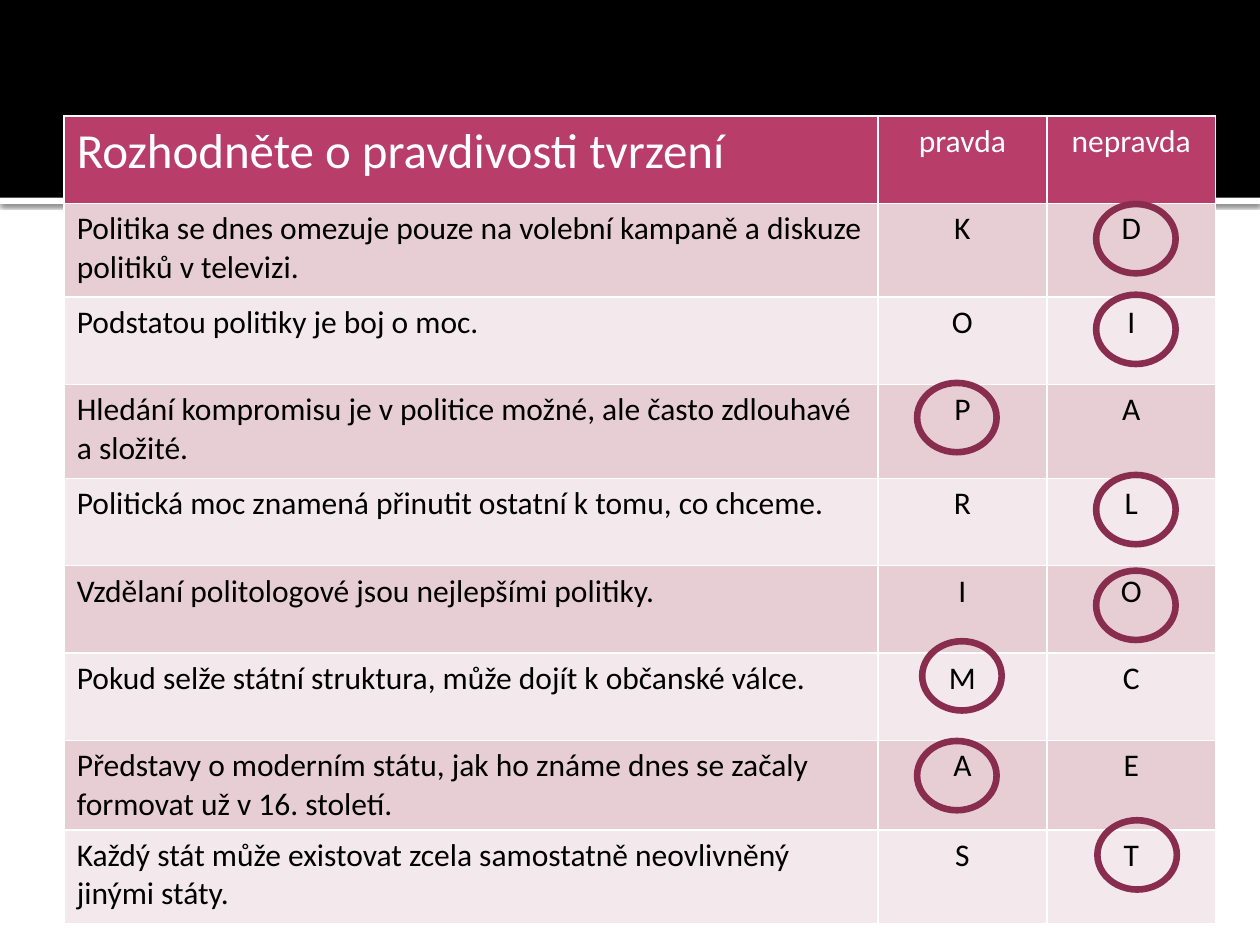
from dataclasses import dataclass
from itertools import accumulate

from lxml import etree
from pptx import Presentation
from pptx.dml.color import RGBColor
from pptx.enum import shapes, text
from pptx.oxml import ns
from pptx.util import Pt


@dataclass(frozen=True)
class Theme:
    font: str = "Calibri"
    title_size: float = 28
    body_size: float = 18
    ring_width: float = 3.78
    black: str = "000000"
    white: str = "FFFFFF"
    header: str = "B83D68"
    bands: tuple = ("E6CED4", "F3E8EB")
    ring: str = "882D4D"


@dataclass(frozen=True)
class Box:
    left: float
    top: float
    width: float
    height: float

    def emu(self):
        return [Pt(v) for v in (self.left, self.top, self.width, self.height)]


THEME = Theme()
SLIDE = Box(0, 0, 720, 540)
TABLE = Box(36.7, 66.2, 658, 460.8)
COLS = [465, 96.5, 96.5]
LOW, TALL = 50, 53.6
ROWS = [LOW, TALL, LOW, TALL, LOW, LOW, LOW, LOW, TALL]
RING_W, RING_H = 45.4, 39.6

HEADER = ("Rozhodněte o pravdivosti tvrzení", "pravda", "nepravda")
STATEMENTS = [
    ("Politika se dnes omezuje pouze na volební kampaně a diskuze politiků v televizi.", "K", "D"),
    ("Podstatou politiky je boj o moc.", "O", "I"),
    ("Hledání kompromisu je v politice možné, ale často zdlouhavé a složité.", "P", "A"),
    ("Politická moc znamená přinutit ostatní k tomu, co chceme.", "R", "L"),
    ("Vzdělaní politologové jsou nejlepšími politiky.", "I", "O"),
    ("Pokud selže státní struktura, může dojít k občanské válce.", "M", "C"),
    ("Představy o moderním státu, jak ho známe dnes se začaly formovat už v 16. století.", "A", "E"),
    ("Každý stát může existovat zcela samostatně neovlivněný jinými státy.", "S", "T"),
]
# Right answer of each statement: column, then offset from the cell's corner
ANSWERS = [(2, 28.2, 0.4), (2, 28.2, -1.4), (1, 22.4, -1), (2, 28.2, -2),
           (2, 28.2, 2.7), (1, 25.3, -7), (1, 22.4, 0), (2, 28.9, -4.7)]


def rgb(value):
    return RGBColor.from_string(value)


def add_bar(s, box, color):
    sp = s.shapes.add_shape(shapes.MSO_SHAPE.RECTANGLE, *box.emu())
    sp.shadow.inherit = False
    sp.fill.solid()
    sp.fill.fore_color.rgb = rgb(color)
    sp.line.fill.background()
    return sp


def add_band(s, box):
    """Black band with a white, softly shadowed rule below it."""
    rule = add_bar(s, Box(box.left, box.top + box.height, box.width, 3.6), THEME.white)
    effects = rule._element.spPr.find(ns.qn("a:effectLst"))
    shadow = etree.SubElement(effects, ns.qn("a:outerShdw"), blurRad=str(Pt(2.5)),
                              dist=str(Pt(0.8)), dir="5400000", rotWithShape="0")
    color = etree.SubElement(shadow, ns.qn("a:srgbClr"), val=THEME.black)
    etree.SubElement(color, ns.qn("a:alpha"), val="60000")
    add_bar(s, box, THEME.black)


def fill_cell(cell, words, fill, color, size, centred):
    cell.fill.solid()
    cell.fill.fore_color.rgb = rgb(fill)
    cell.text_frame.text = words
    p = cell.text_frame.paragraphs[0]
    p.alignment = text.PP_ALIGN.CENTER if centred else text.PP_ALIGN.LEFT
    font = p.runs[0].font
    font.name, font.size, font.bold = THEME.font, Pt(size), False
    font.color.rgb = rgb(color)


def add_quiz(s, box):
    """Table of statements; its default style draws the white borders."""
    data = [HEADER, *STATEMENTS]
    table = s.shapes.add_table(len(data), len(COLS), *box.emu()).table
    for column, width in zip(table.columns, COLS):
        column.width = Pt(width)
    for i, (row, height, words) in enumerate(zip(table.rows, ROWS, data)):
        row.height = Pt(height)
        fill = THEME.bands[(i - 1) % 2] if i else THEME.header
        color = THEME.black if i else THEME.white
        for j, cell in enumerate(row.cells):
            size = THEME.body_size if i or j else THEME.title_size
            fill_cell(cell, words[j], fill, color, size, j > 0)


def add_answers(s, box):
    """Rings around the right answers."""
    lefts = list(accumulate(COLS, initial=box.left))
    tops = list(accumulate(ROWS, initial=box.top))
    for top, (col, dx, dy) in zip(tops[1:], ANSWERS):
        ring = Box(lefts[col] + dx, top + dy, RING_W, RING_H)
        sp = s.shapes.add_shape(shapes.MSO_SHAPE.OVAL, *ring.emu())
        sp.shadow.inherit = False
        sp.fill.background()
        sp.line.color.rgb = rgb(THEME.ring)
        sp.line.width = Pt(THEME.ring_width)


def main():
    prs = Presentation()
    prs.slide_width, prs.slide_height = Pt(SLIDE.width), Pt(SLIDE.height)
    s = prs.slides.add_slide(prs.slide_layouts[6])
    s.background.fill.solid()
    s.background.fill.fore_color.rgb = rgb(THEME.white)
    add_band(s, Box(0, 0, SLIDE.width, 113))
    add_quiz(s, TABLE)
    add_answers(s, TABLE)
    prs.save("out.pptx")


if __name__ == "__main__":
    main()
